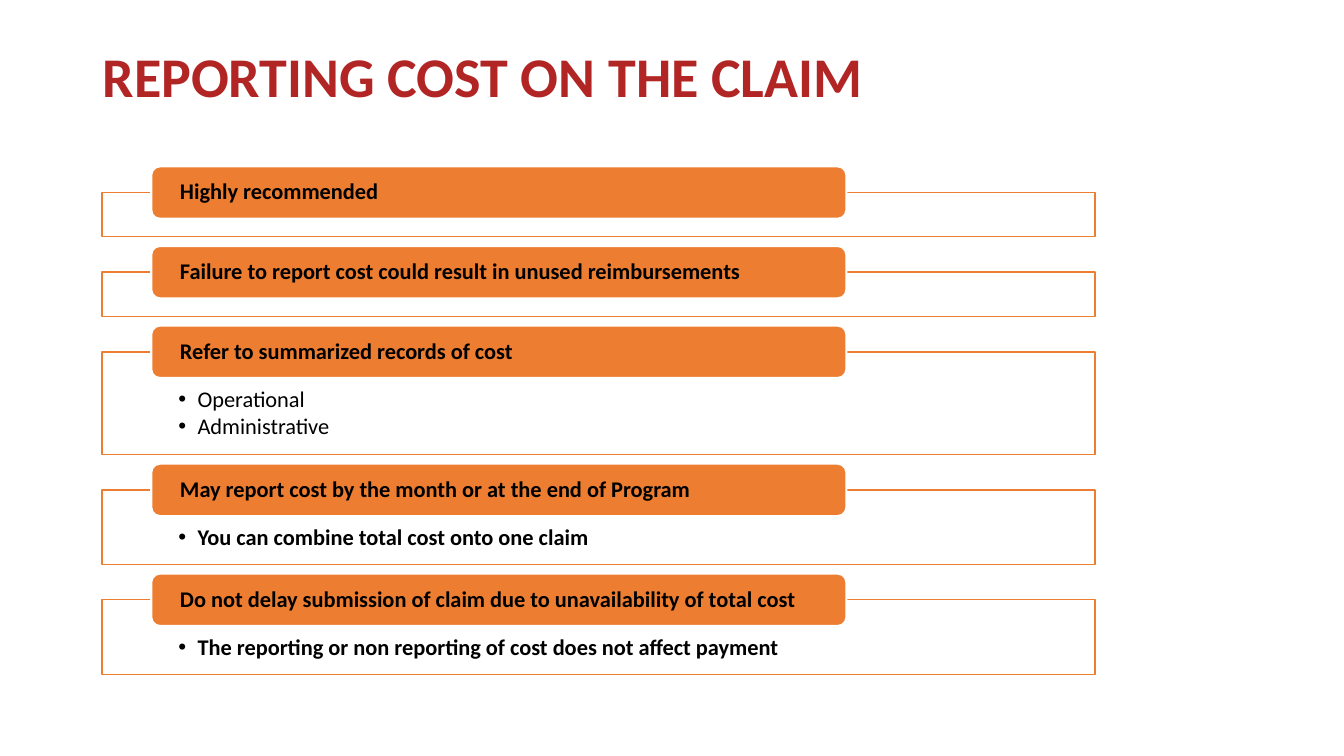
from lxml.etree import SubElement
from pptx import Presentation
from pptx.dml.color import RGBColor
from pptx.enum.shapes import MSO_SHAPE
from pptx.enum.text import MSO_ANCHOR, PP_ALIGN
from pptx.oxml.ns import qn
from pptx.util import Inches, Pt

COLORS = {"title": "B12524", "accent": "ED7D31", "white": "FFFFFF", "text": "000000"}
SECTIONS = [
    ("Highly recommended", [], False, 0.44),
    ("Failure to report cost could result in unused reimbursements", [], False, 0.44),
    ("Refer to summarized records of cost", ["Operational", "Administrative"], False, 1.02),
    ("May report cost by the month or at the end of Program",
     ["You can combine total cost onto one claim"], True, 0.74),
    ("Do not delay submission of claim due to unavailability of total cost",
     ["The reporting or non reporting of cost does not affect payment"], True, 0.74),
]
SECTION_GAP = 0.35


def color(name):
    return RGBColor.from_string(COLORS[name])


def set_all(target, values):
    for name, value in values.items():
        setattr(target, name, value)


def set_frame(box, anchor, left, top, right, bottom):
    set_all(box.text_frame, {
        "word_wrap": True, "vertical_anchor": anchor,
        "margin_left": Inches(left), "margin_top": Inches(top),
        "margin_right": Inches(right), "margin_bottom": Inches(bottom)})


def write(para, text, size, bold, color_name):
    set_all(para, {"alignment": PP_ALIGN.LEFT, "line_spacing": 0.9})
    span = para.add_run()
    span.text = text
    set_all(span.font, {"name": "Calibri", "size": Pt(size), "bold": bold})
    span.font.color.rgb = color(color_name)


def add_bullet(para):
    props = para._p.get_or_add_pPr()
    props.set("marL", str(Inches(0.19)))
    props.set("indent", str(-Inches(0.19)))
    SubElement(props, qn("a:buFont"), typeface="Arial")
    SubElement(props, qn("a:buChar"), char="•")


def add_panel(page, kind, left, top, width, height, fill, line, line_width):
    panel = page.shapes.add_shape(
        kind, Inches(left), Inches(top), Inches(width), Inches(height))
    panel.shadow.inherit = False
    panel.fill.solid()
    panel.fill.fore_color.rgb = color(fill)
    panel.line.color.rgb = color(line)
    panel.line.width = Pt(line_width)
    return panel


def add_title(page, left, top, width, height):
    box = page.shapes.add_textbox(
        Inches(left), Inches(top), Inches(width), Inches(height))
    set_frame(box, MSO_ANCHOR.MIDDLE, 0.1, 0.05, 0.1, 0.5)
    write(box.text_frame.paragraphs[0], "REPORTING COST ON THE CLAIM", 40, True, "title")


def add_section(page, left, top, width, height, heading, items, bold):
    body = add_panel(page, MSO_SHAPE.RECTANGLE, left, top, width, height,
                     "white", "accent", 1)
    fill_color = body.fill._xPr.find(qn("a:solidFill"))[0]
    SubElement(fill_color, qn("a:alpha"), val="90000")
    set_frame(body, MSO_ANCHOR.TOP, 0.76, 0.36, 0.76, 0.12)
    for index, item in enumerate(items):
        frame = body.text_frame
        para = frame.add_paragraph() if index else frame.paragraphs[0]
        para.space_after = Pt(2)
        add_bullet(para)
        write(para, item, 16, bold, "text")

    tab = add_panel(page, MSO_SHAPE.ROUNDED_RECTANGLE, left + 0.49, top - 0.26,
                    width * 0.7, 0.52, "accent", "white", 1.5)
    set_frame(tab, MSO_ANCHOR.MIDDLE, 0.26, 0, 0.26, 0)
    write(tab.text_frame.paragraphs[0], heading, 16, True, "text")


def add_sections(page, left, top, width):
    for heading, items, bold, height in SECTIONS:
        add_section(page, left, top, width, height, heading, items, bold)
        top += height + SECTION_GAP


def main():
    deck = Presentation()
    set_all(deck, {"slide_width": Inches(13.33), "slide_height": Inches(7.5)})
    page = deck.slides.add_slide(deck.slide_layouts[6])
    add_title(page, 0.92, 0.29, 11.5, 1.45)
    add_sections(page, 1.01, 1.91, 9.85)
    deck.save("out.pptx")


if __name__ == "__main__":
    main()
